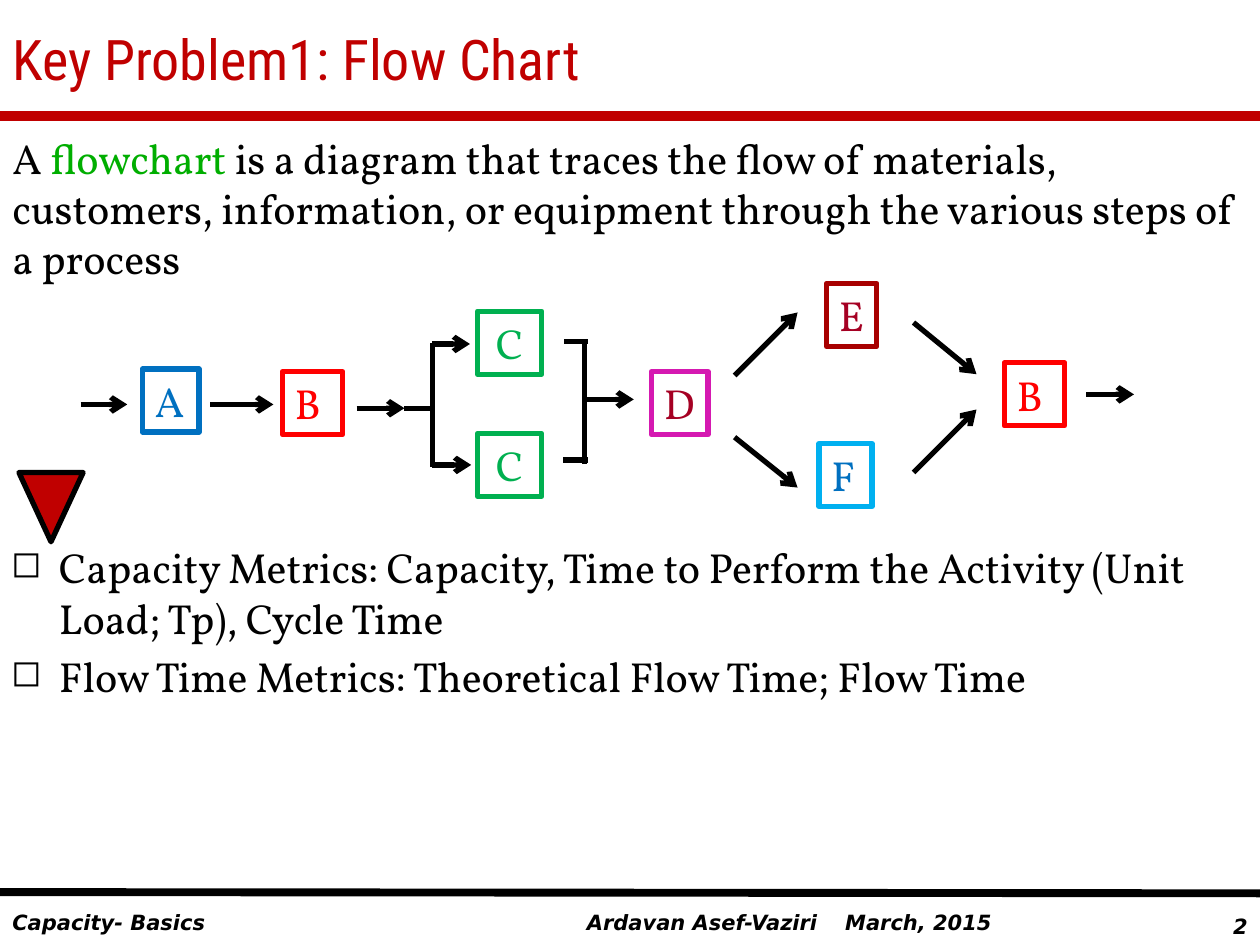
from dataclasses import dataclass

from lxml import etree
from pptx import Presentation
from pptx.dml.color import RGBColor
from pptx.enum.shapes import MSO_CONNECTOR, MSO_SHAPE
from pptx.enum.text import MSO_ANCHOR, PP_ALIGN
from pptx.oxml.ns import qn
from pptx.util import Inches, Pt

LEFT, CENTER, RIGHT = PP_ALIGN.LEFT, PP_ALIGN.CENTER, PP_ALIGN.RIGHT
TOP, MIDDLE = MSO_ANCHOR.TOP, MSO_ANCHOR.MIDDLE
STRAIGHT = MSO_CONNECTOR.STRAIGHT


@dataclass(frozen=True)
class Theme:
    title_font: str = "Roboto Condensed"
    body_font: str = "Vollkorn"
    footer_font: str = "DejaVu Sans"
    title_size: float = 32
    body_size: float = 24
    footer_size: float = 12
    black: str = "000000"
    crimson: str = "C00000"
    term: str = "00AE00"
    blue: str = "0070C0"
    sky: str = "00B0F0"
    red: str = "FF0000"
    green: str = "00B050"
    magenta: str = "D519B1"
    maroon: str = "A80000"
    wine: str = "A50023"
    flow_line: float = 3
    title_rule: float = 6
    footer_rule: float = 4.5


T = Theme()


def rgb(color):
    return RGBColor.from_string(color)


def add_child(parent, tag, **attrs):
    return etree.SubElement(parent, qn(tag), attrs)


def write(p, text, size=T.body_size, font=T.body_font, color=T.black,
          bold=False, italic=False, align=LEFT, before=0):
    """Append one formatted run to a paragraph."""
    p.alignment = align
    if before:
        p.space_before = Pt(before)
    r = p.add_run()
    r.text = text
    r.font.size, r.font.name = Pt(size), font
    r.font.bold, r.font.italic = bold, italic
    r.font.color.rgb = rgb(color)


def add_box(s, x, y, w, h, anchor=TOP):
    tf = s.shapes.add_textbox(Inches(x), Inches(y), Inches(w), Inches(h)).text_frame
    tf.word_wrap = True
    tf.vertical_anchor = anchor
    return tf


def add_line(s, start, end, color=T.black, width=T.flow_line, arrow=False):
    cn = s.shapes.add_connector(STRAIGHT, *map(Inches, start + end))
    cn.line.color.rgb = rgb(color)
    cn.line.width = Pt(width)
    if arrow:
        add_child(cn.line._get_or_add_ln(), "a:tailEnd", type="arrow")
    add_child(cn._element.spPr, "a:effectLst")


def add_shape(s, kind, x, y, w, h, line, fill=None):
    sp = s.shapes.add_shape(kind, Inches(x), Inches(y), Inches(w), Inches(h))
    sp.shadow.inherit = False
    if fill:
        sp.fill.solid()
        sp.fill.fore_color.rgb = rgb(fill)
    else:
        sp.fill.background()
    sp.line.color.rgb = rgb(line)
    sp.line.width = Pt(T.flow_line)
    return sp


def add_step(s, letter, x, y, w, line, color, align=LEFT):
    tf = add_shape(s, MSO_SHAPE.RECTANGLE, x, y, w, 0.5, line).text_frame
    tf.word_wrap = True
    tf.vertical_anchor = TOP
    write(tf.paragraphs[0], letter, color=color, align=align)


def add_bullets(tf, items):
    for i, item in enumerate(items):
        p = tf.add_paragraph() if i else tf.paragraphs[0]
        pPr = p._p.get_or_add_pPr()
        pPr.set("marL", str(Inches(0.38)))
        pPr.set("indent", str(Inches(-0.38)))
        add_child(add_child(pPr, "a:buClr"), "a:srgbClr", val=T.black)
        add_child(pPr, "a:buSzPct", val="88000")
        add_child(pPr, "a:buChar", char="◻")
        write(p, item, before=4.8 if i else 0)


def add_footer(s):
    add_line(s, (0, 7.08), (10, 7.09), width=T.footer_rule)
    for text, x, y, w, align in (
        ("Capacity- Basics", 0, 7.17, 4.5, LEFT),
        ("Ardavan Asef-Vaziri\tMarch, 2015", 4.56, 7.17, 4.1, LEFT),
        ("2", 9.25, 7.2, 0.75, RIGHT),
    ):
        p = add_box(s, x, y, w, 0.3).paragraphs[0]
        if "\t" in text:
            tabs = add_child(p._p.get_or_add_pPr(), "a:tabLst")
            add_child(tabs, "a:tab", pos=str(Inches(2.05)), algn="l")
        write(p, text, T.footer_size, T.footer_font, bold=True, italic=True, align=align)


def add_flow(s):
    for step in (
        ("A", 1.13, 2.93, 0.45, T.blue, T.blue),
        ("B", 2.24, 2.95, 0.48, T.red, T.red),
        ("C", 3.79, 2.47, 0.51, T.green, T.green, CENTER),
        ("C", 3.79, 3.44, 0.51, T.green, T.green, CENTER),
        ("D", 5.17, 2.95, 0.45, T.magenta, T.wine),
        ("E", 6.56, 2.25, 0.4, T.maroon, T.wine),
        ("F", 6.5, 3.52, 0.42, T.sky, T.blue),
        ("B", 7.97, 2.88, 0.48, T.red, T.red),
    ):
        add_step(s, *step)

    arrows = (
        ((0.64, 3.21), (1.01, 3.21)),
        ((1.67, 3.21), (2.17, 3.21)),
        ((2.83, 3.24), (3.21, 3.24)),
        ((3.43, 2.73), (3.73, 2.73)),
        ((3.43, 3.69), (3.74, 3.69)),
        ((4.66, 3.17), (5.03, 3.17)),
        ((5.83, 2.98), (6.33, 2.48)),
        ((5.83, 3.47), (6.33, 3.87)),
        ((7.25, 2.56), (7.75, 2.97)),
        ((7.25, 3.75), (7.75, 3.25)),
        ((8.62, 3.13), (9, 3.13)),
    )
    brackets = (
        ((3.21, 3.24), (3.44, 3.24)),
        ((3.43, 2.72), (3.43, 3.71)),
        ((4.64, 2.69), (4.64, 3.68)),
        ((4.48, 2.71), (4.67, 2.71)),
        ((4.47, 3.65), (4.67, 3.65)),
    )
    for start, end in arrows:
        add_line(s, start, end, arrow=True)
    for start, end in brackets:
        add_line(s, start, end)
    add_shape(s, MSO_SHAPE.FLOWCHART_MERGE, 0.15, 3.75, 0.51, 0.55, T.black, T.crimson)


def main():
    prs = Presentation()
    prs.slide_width, prs.slide_height = Inches(10), Inches(7.5)
    s = prs.slides.add_slide(prs.slide_layouts[6])

    add_footer(s)
    title = add_box(s, 0, 0, 10, 0.92, MIDDLE).paragraphs[0]
    write(title, "Key Problem1: Flow Chart", T.title_size, T.title_font, T.crimson)
    add_line(s, (0, 0.92), (10, 0.92), T.crimson, T.title_rule)

    definition = add_box(s, 0, 1, 10, 1.4).paragraphs[0]
    write(definition, "A")
    write(definition, " flowchart ", color=T.term)
    write(definition, "is a diagram that traces the flow of materials, customers, "
                      "information, or equipment through the various steps of a process")
    add_flow(s)
    add_bullets(add_box(s, -0.01, 4.25, 10.1, 1.92), (
        "Capacity Metrics: Capacity, Time to Perform the Activity "
        "(Unit Load; Tp), Cycle Time",
        "Flow Time Metrics: Theoretical Flow Time; Flow Time",
    ))
    prs.save("out.pptx")


if __name__ == "__main__":
    main()
